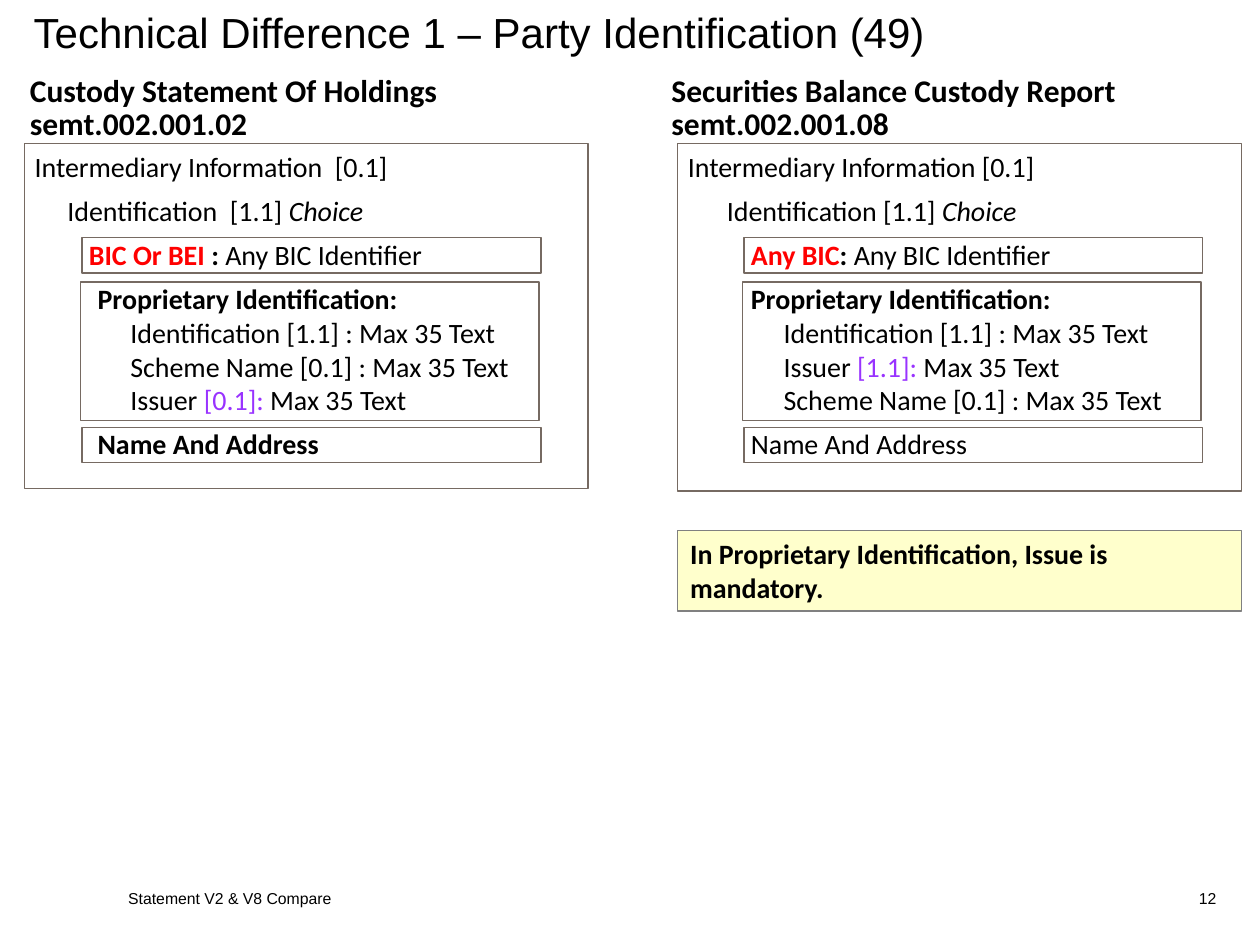
from dataclasses import dataclass
from typing import NamedTuple, Optional

from pptx import Presentation
from pptx.dml.color import RGBColor
from pptx.enum.shapes import MSO_SHAPE
from pptx.enum.text import MSO_ANCHOR, PP_ALIGN
from pptx.util import Pt


@dataclass(frozen=True)
class Theme:
    text: RGBColor = RGBColor(0x00, 0x00, 0x00)
    changed: RGBColor = RGBColor(0xFF, 0x00, 0x00)
    cardinality: RGBColor = RGBColor(0x99, 0x33, 0xFF)
    frame: RGBColor = RGBColor(0x76, 0x6A, 0x62)
    note_fill: RGBColor = RGBColor(0xFF, 0xFF, 0xCC)
    note_line: RGBColor = RGBColor(0x80, 0x80, 0x80)
    title_font: str = "Arial"
    body_font: str = "Calibri"
    title: float = 24
    heading: float = 18
    body: float = 16
    footer: float = 9
    line: float = 0.75


THEME = Theme()


class Box(NamedTuple):
    left: float
    top: float
    width: float
    height: float


class Span(NamedTuple):
    text: str
    bold: bool = False
    italic: bool = False
    color: RGBColor = THEME.text


class Line(NamedTuple):
    spans: list[Span]
    indent: float = 0
    after: float = 0
    spacing: Optional[float] = None
    align: PP_ALIGN = PP_ALIGN.LEFT


class Column(NamedTuple):
    heading: list[str]
    heading_left: float
    frame: Box
    text_left: float
    inner_left: float
    lines: list[Line]


def write(shape, lines: list[Line], font: str, size: float, anchor=MSO_ANCHOR.TOP) -> None:
    tf = shape.text_frame
    tf.word_wrap = True
    tf.vertical_anchor = anchor
    for i, line in enumerate(lines):
        p = tf.add_paragraph() if i else tf.paragraphs[0]
        p.alignment = line.align
        p.space_after = Pt(line.after)
        if line.spacing:
            p.line_spacing = Pt(line.spacing)
        if line.indent:
            p._p.get_or_add_pPr().set("marL", str(Pt(line.indent)))
        for span in line.spans:
            r = p.add_run()
            r.text = span.text
            r.font.name, r.font.size = font, Pt(size)
            r.font.bold, r.font.italic = span.bold, span.italic
            r.font.color.rgb = span.color


def add_text(s, box: Box, lines: list[Line], font: str, size: float, anchor=MSO_ANCHOR.TOP) -> None:
    write(s.shapes.add_textbox(*map(Pt, box)), lines, font, size, anchor)


def add_rect(s, box: Box, line: RGBColor, fill: Optional[RGBColor] = None):
    sp = s.shapes.add_shape(MSO_SHAPE.RECTANGLE, *map(Pt, box))
    sp.shadow.inherit = False
    sp.line.color.rgb = line
    sp.line.width = Pt(THEME.line)
    if fill is None:
        sp.fill.background()
    else:
        sp.fill.solid()
        sp.fill.fore_color.rgb = fill
    return sp


def add_column(s, col: Column) -> None:
    add_rect(s, col.frame, THEME.frame)
    add_text(s, Box(col.text_left, col.frame.top, 295, 186.5), col.lines,
             THEME.body_font, THEME.body)
    for shift, top, height in ((0, 135.8, 20.2), (0, 244.3, 20.2), (-1, 161.2, 79.2)):
        add_rect(s, Box(col.inner_left + shift, top, 262.2, height), THEME.frame)
    add_text(s, Box(col.heading_left, 39.6, 280, 45.4),
             [Line([Span(t, bold=True)], spacing=19) for t in col.heading],
             THEME.body_font, THEME.heading)


CHOICE, ITEM, FIELD = 18.7, 36, 54.7
GAP = 6
IDENTIFIER = Span("Any BIC Identifier")
PROPRIETARY = Line([Span("Proprietary Identification:", bold=True)], ITEM)
IDENTIFICATION = Line([Span("Identification [1.1] : Max 35 Text")], FIELD)
SCHEME = Line([Span("Scheme Name [0.1] : Max 35 Text")], FIELD)


def issuer(cardinality: str) -> Line:
    return Line([Span("Issuer "), Span(f"{cardinality}: ", color=THEME.cardinality),
                 Span("Max 35 Text")], FIELD)


COLUMNS = [
    Column(
        ["Custody Statement Of Holdings", "semt.002.001.02"], 10,
        Box(13.8, 82, 322.2, 197.2), 12.7, 46.9,
        [
            Line([Span("Intermediary Information  [0.1]")], after=GAP),
            Line([Span("Identification  [1.1] "), Span("Choice", italic=True)], CHOICE, GAP),
            Line([Span("BIC Or BEI ", bold=True, color=THEME.changed),
                  Span(": ", bold=True), IDENTIFIER], 31, GAP),
            PROPRIETARY,
            IDENTIFICATION,
            SCHEME,
            issuer("[0.1]")._replace(after=GAP),
            Line([Span("Name And Address", bold=True)], ITEM),
        ],
    ),
    Column(
        ["Securities Balance Custody Report", "semt.002.001.08"], 376.6,
        Box(387.3, 82, 322.2, 198.6), 386, 425.2,
        [
            Line([Span("Intermediary Information [0.1]")], after=GAP),
            Line([Span("Identification [1.1] "), Span("Choice", italic=True)], 22.3, GAP),
            Line([Span("Any BIC", bold=True, color=THEME.changed),
                  Span(": ", bold=True), IDENTIFIER], ITEM, GAP),
            PROPRIETARY,
            IDENTIFICATION,
            issuer("[1.1]"),
            SCHEME._replace(after=GAP),
            Line([Span("Name And Address")], ITEM),
        ],
    ),
]


def main() -> None:
    prs = Presentation()
    prs.slide_width, prs.slide_height = Pt(720), Pt(540)
    s = prs.slides.add_slide(prs.slide_layouts[6])

    add_text(s, Box(12.2, 0, 700.6, 40.3),
             [Line([Span("Technical Difference 1 – Party Identification (49)")])],
             THEME.title_font, THEME.title)
    for column in COLUMNS:
        add_column(s, column)

    note = add_rect(s, Box(387.3, 303.1, 322.2, 46.1), THEME.note_line, THEME.note_fill)
    write(note, [Line([Span("In Proprietary Identification, Issue is mandatory.", bold=True)])],
          THEME.body_font, THEME.body)

    for box, text, align in (
        (Box(66.2, 504, 447, 18), "Statement V2 & V8 Compare", PP_ALIGN.LEFT),
        (Box(642.2, 504, 60, 18), "12", PP_ALIGN.RIGHT),
    ):
        add_text(s, box, [Line([Span(text)], align=align)],
                 THEME.title_font, THEME.footer, MSO_ANCHOR.MIDDLE)

    prs.save("out.pptx")


if __name__ == "__main__":
    main()
